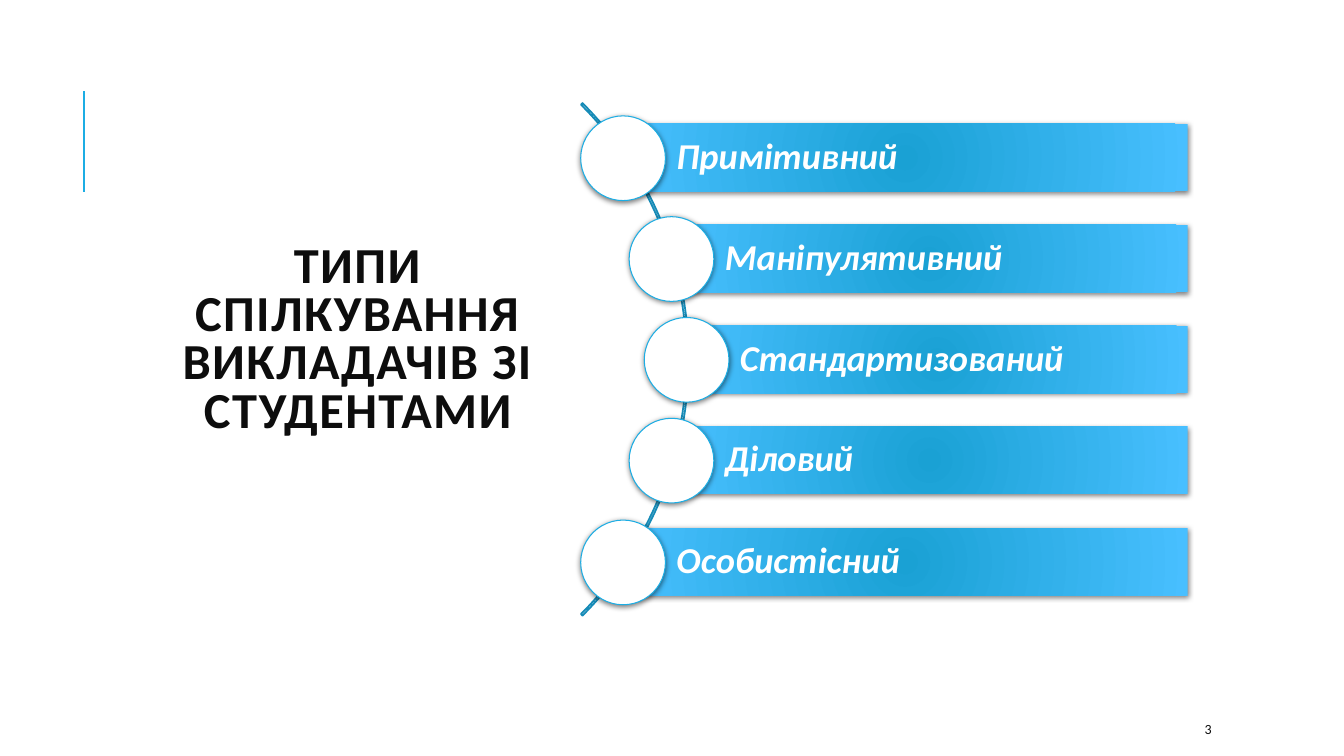
from lxml.etree import SubElement
from pptx import Presentation
from pptx.dml.color import RGBColor
from pptx.enum.shapes import MSO_CONNECTOR, MSO_SHAPE
from pptx.enum.text import MSO_ANCHOR, MSO_AUTO_SIZE, PP_ALIGN
from pptx.oxml.ns import qn
from pptx.util import Emu, Pt

PX = 9144
FONT = "Calibri"
INK = RGBColor(0x0D, 0x0D, 0x0D)
WHITE = RGBColor(0xFF, 0xFF, 0xFF)
CYAN = RGBColor(0x1C, 0xAD, 0xE4)
DEEP = RGBColor(0x16, 0x8B, 0xB7)
CORE = RGBColor(0x1A, 0xA1, 0xD4)
EDGE = RGBColor(0x48, 0xBF, 0xFF)
TYPES = ["Примітивний", "Маніпулятивний", "Стандартизований", "Діловий", "Особистісний"]
INDENTS = [42, 90, 105, 90, 42]


def px(*sizes):
    return [Emu(size * PX) for size in sizes]


def style(frame, size, color, bold=False, italic=False):
    frame.word_wrap = True
    frame.vertical_anchor = MSO_ANCHOR.MIDDLE
    font = frame.paragraphs[0].runs[0].font
    font.name, font.size = FONT, Pt(size)
    font.bold, font.italic = bold, italic
    font.color.rgb = color


def add_shade(shape):
    shape.shadow.inherit = False
    effects = shape._element.spPr.find(qn("a:effectLst"))
    shade = SubElement(effects, qn("a:outerShdw"), blurRad="50800", dist="12700",
                       dir="5400000", algn="ctr", rotWithShape="0")
    black = SubElement(shade, qn("a:srgbClr"), val="000000")
    SubElement(black, qn("a:alpha"), val="50000")


def fill_glow(shape):
    shape.fill.gradient()
    for stop, color in zip(shape.fill.gradient_stops, (CORE, EDGE)):
        stop.color.rgb = color
    grad = shape._element.spPr.find(qn("a:gradFill"))
    grad.remove(grad.find(qn("a:lin")))
    glow = SubElement(grad, qn("a:path"), path="circle")
    SubElement(glow, qn("a:fillToRect"), l="100000", t="100000", r="100000", b="100000")


def add_title(slide, left, top, width, height):
    title = slide.shapes.title
    title.left, title.top, title.width, title.height = px(left, top, width, height)
    frame = title.text_frame
    frame.text = "ТИПИ СПІЛКУВАННЯ ВИКЛАДАЧІВ ЗІ СТУДЕНТАМИ"
    frame.auto_size = MSO_AUTO_SIZE.NONE
    frame.margin_left, frame.margin_right = px(20, 20)
    style(frame, 36, INK, bold=True)
    line = frame.paragraphs[0]
    line.alignment = PP_ALIGN.CENTER
    line.line_spacing = 0.8
    line.runs[0].font._element.set("spc", "100")


def add_rule(slide, left, top, height):
    rule = slide.shapes.add_connector(
        MSO_CONNECTOR.STRAIGHT, *px(left, top + height, left, top))
    rule.line.color.rgb = CYAN
    rule.line.width = Pt(1.5)
    SubElement(rule._element.spPr, qn("a:effectLst"))


def add_number(slide, left, top, width, height):
    box = slide.shapes.add_textbox(*px(left, top, width, height))
    box.text_frame.text = "3"
    style(box.text_frame, 10, INK)


def add_arc(slide, left, top, size):
    arc = slide.shapes.add_shape(MSO_SHAPE.BLOCK_ARC, *px(left, top, size, size))
    for spot, value in enumerate((189, 27, 0.003)):
        arc.adjustments[spot] = value
    arc.fill.background()
    arc.line.color.rgb = DEEP
    arc.line.width = Pt(1.25)
    arc.shadow.inherit = False


def add_bar(slide, text, left, top, width, height):
    bar = slide.shapes.add_shape(MSO_SHAPE.RECTANGLE, *px(left, top, width, height))
    fill_glow(bar)
    bar.line.fill.background()
    add_shade(bar)
    frame = bar.text_frame
    frame.text = text
    frame.margin_left, frame.margin_top, frame.margin_right, frame.margin_bottom = px(53, 7, 7, 7)
    style(frame, 26, WHITE, bold=True, italic=True)
    line = frame.paragraphs[0]
    line.alignment = PP_ALIGN.LEFT
    line.line_spacing = 0.9
    line.space_after = Pt(9)


def add_dot(slide, left, top, size):
    dot = slide.shapes.add_shape(MSO_SHAPE.OVAL, *px(left, top, size, size))
    dot.fill.solid()
    dot.fill.fore_color.rgb = WHITE
    dot.line.color.rgb = CYAN
    dot.line.width = Pt(0.75)
    add_shade(dot)


def add_list(slide, left, top, width, height):
    bar, dot = 67, 84
    add_arc(slide, left - 612, top - 118, 719)
    for row, (text, indent) in enumerate(zip(TYPES, INDENTS)):
        y = top + row * (height - dot) // (len(TYPES) - 1)
        add_bar(slide, text, left + indent, y + (dot - bar) // 2, width - indent, bar)
        add_dot(slide, left + indent - dot // 2, y, dot)


def main():
    deck = Presentation()
    deck.slide_width, deck.slide_height = px(1333, 750)
    slide = deck.slides.add_slide(deck.slide_layouts[5])
    add_rule(slide, 83, 90, 100)
    add_title(slide, 114, 192, 482, 293)
    add_number(slide, 1185, 708, 106, 30)
    add_list(slide, 576, 115, 602, 485)
    deck.save("out.pptx")


if __name__ == "__main__":
    main()
